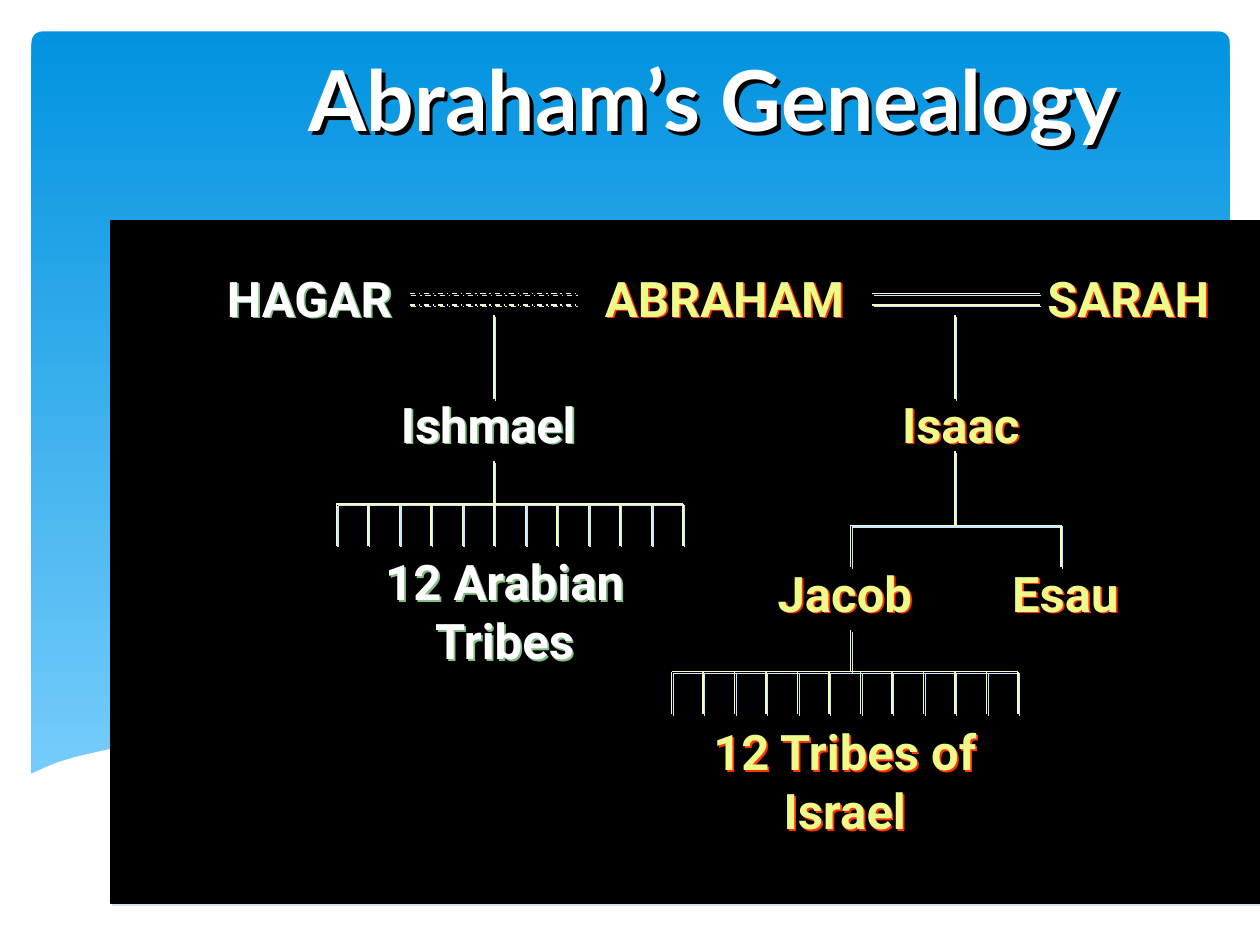
import collections
import math

import pptx
import pptx.dml.color
import pptx.enum.dml
import pptx.enum.shapes
import pptx.enum.text
import pptx.oxml
import pptx.oxml.ns
import pptx.util

Inches = pptx.util.Inches
Pt = pptx.util.Pt
Shapes = pptx.enum.shapes.MSO_SHAPE
Box = collections.namedtuple("Box", "left top width height")

COLORS = {
    "sky_top": "0293E0",
    "sky_bottom": "83D3FE",
    "white": "FFFFFF",
    "black": "000000",
    "line": "F6FCC0",
    "line_shadow": "C6E7FC",
    "yellow": "EFFA88",
    "red_shadow": "FF3300",
    "green_shadow": "80C080",
}
WAVE = [
    (9.77, 6.48), (9.5, 6.58), (9.2, 6.67), (8.87, 6.73), (8.5, 6.77),
    (8.09, 6.79), (7.61, 6.77), (7.08, 6.7), (6.48, 6.64), (5.79, 6.51),
    (5.03, 6.35), (4.47, 6.22), (3.91, 6.09), (3.4, 5.99), (2.92, 5.92),
    (2.5, 5.88), (2.11, 5.86), (1.77, 5.86), (1.46, 5.87), (1.19, 5.89),
    (0.95, 5.93), (0.76, 5.97), (0.59, 6.01), (0.46, 6.05), (0.36, 6.09),
    (0.23, 6.15), (0.23, 7.31), (9.77, 7.31),
]


def color(name):
    return pptx.dml.color.RGBColor.from_string(COLORS[name])


def add_shadow(shape, name, offset=1):
    distance = round(Pt(offset) * math.sqrt(2))
    shape._element.spPr.append(pptx.oxml.parse_xml(
        f'<a:effectLst {pptx.oxml.ns.nsdecls("a")}>'
        f'<a:outerShdw dist="{distance}" dir="2700000" algn="ctr" rotWithShape="0">'
        f'<a:srgbClr val="{COLORS[name]}"/></a:outerShdw></a:effectLst>'))


def add_label(slide, box, text, fill="yellow", shadow="red_shadow",
              font="Roboto", size=28, offset=1):
    label = slide.shapes.add_textbox(*map(Inches, box))
    frame = label.text_frame
    frame.word_wrap = True
    frame.auto_size = pptx.enum.text.MSO_AUTO_SIZE.SHAPE_TO_FIT_TEXT
    frame.text = text
    para = frame.paragraphs[0]
    para.alignment = pptx.enum.text.PP_ALIGN.CENTER
    span = para.runs[0]
    span.font.name = font
    span.font.size = Pt(size)
    span.font.bold = True
    span.font.color.rgb = color(fill)
    add_shadow(label, shadow, offset)


def add_line(slide, x1, y1, x2, y2, dash=None):
    line = slide.shapes.add_connector(
        pptx.enum.shapes.MSO_CONNECTOR.STRAIGHT, *map(Inches, (x1, y1, x2, y2)))
    line.line.color.rgb = color("line")
    line.line.width = Pt(0.75)
    if dash:
        line.line.dash_style = dash
    add_shadow(line, "line_shadow")


def add_marriage(slide, box, dash=None):
    for y in (box.top, box.top + box.height):
        add_line(slide, box.left, y, box.left + box.width, y, dash)


def add_comb(slide, box, count):
    add_line(slide, box.left, box.top, box.left + box.width, box.top)
    for index in range(count):
        x = box.left + index * box.width / (count - 1)
        add_line(slide, x, box.top, x, box.top + box.height)


def add_backdrop(slide, box):
    sky = slide.shapes.add_shape(Shapes.ROUNDED_RECTANGLE, *map(Inches, box))
    sky.adjustments[0] = 0.013
    sky.shadow.inherit = False
    sky.line.fill.background()
    sky.fill.gradient()
    sky.fill.gradient_angle = 270
    for stop, name in zip(sky.fill.gradient_stops, ("sky_top", "sky_bottom")):
        stop.color.rgb = color(name)
    points = [(Inches(x - 0.25 + box.left), Inches(y - 0.25 + box.top)) for x, y in WAVE]
    builder = slide.shapes.build_freeform(*points[0])
    builder.add_line_segments(points[1:], close=True)
    wave = builder.convert_to_shape()
    wave.shadow.inherit = False
    wave.fill.solid()
    wave.fill.fore_color.rgb = color("white")
    wave.line.fill.background()


def add_panel(slide, box):
    panel = slide.shapes.add_shape(Shapes.RECTANGLE, *map(Inches, box))
    panel.fill.solid()
    panel.fill.fore_color.rgb = color("black")
    panel.line.color.rgb = color("black")
    panel.line.width = Pt(0.75)
    add_shadow(panel, "line_shadow")


def add_hagar_branch(slide, box):
    left, top = box.left, box.top
    stem = left + 2.34
    white = {"fill": "white", "shadow": "green_shadow"}
    add_marriage(slide, Box(left + 1.67, top + 0.25, 1.33, 0.09),
                 pptx.enum.dml.MSO_LINE.DASH_DOT)
    add_label(slide, Box(left, top, 1.75, 0.57), "HAGAR", **white)
    add_line(slide, stem, top + 0.42, stem, top + 1.09)
    add_label(slide, Box(left + 1.42, top + 1, 1.75, 0.57), "Ishmael", **white)
    add_line(slide, stem, top + 1.58, stem, top + 1.92)
    add_comb(slide, Box(left + 1.09, top + 1.92, 2.75, 0.33), 12)
    add_label(slide, Box(left + 0.8, top + 2.25, 3.25, 1.04), "12 Arabian Tribes", **white)


def add_sarah_branch(slide, box):
    left, top = box.left, box.top
    stem = left + 3.08
    jacob = left + 2.25
    add_label(slide, Box(left, top, 2.5, 0.57), "ABRAHAM")
    add_marriage(slide, Box(left + 2.42, top + 0.25, 1.33, 0.09))
    add_label(slide, Box(left + 3.58, top, 1.75, 0.57), "SARAH")
    add_line(slide, stem, top + 0.42, stem, top + 1.09)
    add_label(slide, Box(left + 2.25, top + 1, 1.75, 0.57), "Isaac")
    add_line(slide, stem, top + 1.5, stem, top + 2.09)
    add_comb(slide, Box(jacob, top + 2.09, 1.67, 0.33), 2)
    add_label(slide, Box(left + 3.08, top + 2.34, 1.75, 0.57), "Esau")
    add_label(slide, Box(left + 1.33, top + 2.34, 1.75, 0.57), "Jacob")
    add_line(slide, jacob, top + 2.92, jacob, top + 3.25)
    add_comb(slide, Box(left + 0.83, top + 3.25, 2.75, 0.34), 12)
    add_label(slide, Box(left + 0.58, top + 3.6, 3.25, 0.57), "12 Tribes of Israel")


def main():
    deck = pptx.Presentation()
    deck.slide_width, deck.slide_height = Inches(10), Inches(7.5)
    slide = deck.slides.add_slide(deck.slide_layouts[6])
    add_backdrop(slide, Box(0.25, 0.25, 9.51, 6.6))
    add_panel(slide, Box(0.88, 1.75, 9.12, 5.42))
    add_label(slide, Box(1.75, 0.33, 7.83, 0.9), "Abraham’s Genealogy",
              "white", "black", "Lato", 48, 2)
    add_hagar_branch(slide, Box(1.58, 2.08, 4.05, 3.29))
    add_sarah_branch(slide, Box(4.5, 2.08, 5.33, 4.64))
    deck.save("out.pptx")


if __name__ == "__main__":
    main()
